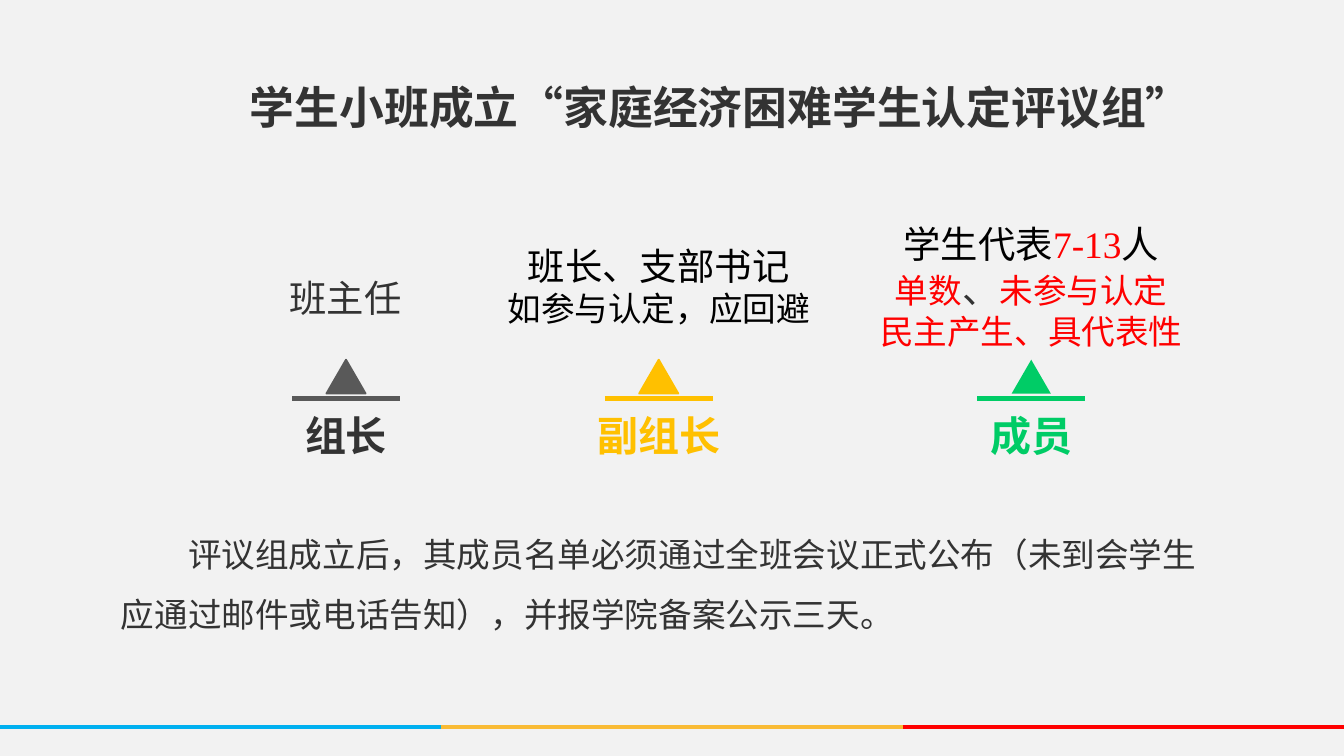
from dataclasses import dataclass

from lxml import etree
from pptx import Presentation
from pptx import util as u
from pptx.dml import color as col
from pptx.enum import shapes, text
from pptx.oxml import ns


@dataclass(frozen=True)
class Theme:
    font: str = "Times New Roman"
    back: str = "F2F2F2"
    ink: str = "333333"
    black: str = "000000"
    gray: str = "595959"
    gold: str = "FFC000"
    green: str = "00CC66"
    red: str = "FF0000"
    sky: str = "00B0F0"
    amber: str = "F9BB35"
    head: int = 24
    role: int = 22
    main: int = 20
    note: int = 18


T = Theme()
MID, LEFT = text.PP_ALIGN.CENTER, text.PP_ALIGN.LEFT


def write(box, place, paras, align=MID, gap=1.0, bold=False, wrap=True):
    box.left, box.top, box.width, box.height = [u.Cm(v) for v in place]
    frame = box.text_frame
    frame.word_wrap = wrap
    frame.auto_size = text.MSO_AUTO_SIZE.SHAPE_TO_FIT_TEXT
    frame.vertical_anchor = text.MSO_ANCHOR.TOP
    for i, runs in enumerate(paras):
        para = frame.add_paragraph() if i else frame.paragraphs[0]
        para.alignment, para.line_spacing = align, gap
        para.space_before = u.Pt(0)
        for words, size, tint in runs:
            run = para.add_run()
            run.text = words
            run.font.name, run.font.size, run.font.bold = T.font, u.Pt(size), bold
            run.font.color.rgb = col.RGBColor.from_string(tint)
    return frame


def rule(x1, x2, y, tint, width):
    line = slide.shapes.add_connector(
        shapes.MSO_CONNECTOR.STRAIGHT, u.Cm(x1), u.Cm(y), u.Cm(x2), u.Cm(y))
    line.line.color.rgb = col.RGBColor.from_string(tint)
    line.line.width = u.Pt(width)
    etree.SubElement(line._element.spPr, ns.qn("a:effectLst"))


deck = Presentation()
deck.slide_width, deck.slide_height = u.Cm(25.4), u.Cm(14.29)
slide = deck.slides.add_slide(deck.slide_layouts[1])
slide.background.fill.solid()
slide.background.fill.fore_color.rgb = col.RGBColor.from_string(T.back)
title, body = slide.placeholders

write(title, (4.47, 1.37, 18.59, 1.27),
      [[("学生小班成立“家庭经济困难学生认定评议组”", T.head, T.ink)]], LEFT, bold=True)

frame = write(body, (2.03, 9.58, 21.34, 2.57),
              [[("评议组成立后，其成员名单必须通过全班会议正式公布（未到会学生应通过邮件或电话告知），并报学院备案公示三天。",
                 T.note, T.ink)]], LEFT, 1.5)
props = frame.paragraphs[0]._p.get_or_add_pPr()
props.set("marL", "0")
props.set("indent", str(u.Cm(1.27)))
etree.SubElement(props, ns.qn("a:buNone"))

roles = [
    ("组长", 6.54, T.gray, T.ink, 4.65, 2.64, 1.55, LEFT, 1.5, False,
     [[("班主任", T.main, T.ink)]]),
    ("副组长", 12.45, T.gold, T.gold, 4.47, 6.27, 1.88, MID, 1.0, False,
     [[("班长、支部书记", T.main, T.black)],
      [("如参与认定，应回避", T.note, T.black)]]),
    ("成员", 19.49, T.green, T.green, 4.06, 8.61, 2.74, MID, 1.0, True,
     [[("学生代表", T.main, T.black), ("7-13", T.main, T.red), ("人", T.main, T.black)],
      [("单数", T.note, T.red), ("、", T.main, T.ink), ("未参与认定", T.note, T.red)],
      [("民主产生、具代表性", T.note, T.red)]]),
]
for name, x, tint, ink, top, wide, high, align, gap, wrap, paras in roles:
    rule(x - 1.02, x + 1.02, 7.53, tint, 3)
    mark = slide.shapes.add_shape(shapes.MSO_SHAPE.ISOSCELES_TRIANGLE,
                                  u.Cm(x - 0.37), u.Cm(6.8), u.Cm(0.74), u.Cm(0.64))
    mark.shadow.inherit = False
    mark.fill.solid()
    mark.fill.fore_color.rgb = col.RGBColor.from_string(tint)
    if tint == T.green:
        mark.line.fill.background()
    else:
        mark.line.color.rgb = col.RGBColor.from_string(tint)
        mark.line.width = u.Pt(1)
    label = slide.shapes.add_textbox(0, 0, 0, 0)
    frame = write(label, (x - 2.4, 7.62, 4.8, 1.19), [[(name, T.role, ink)]], bold=True)
    frame.vertical_anchor = text.MSO_ANCHOR.MIDDLE
    write(slide.shapes.add_textbox(0, 0, 0, 0), (x - wide / 2, top, wide, high),
          paras, align, gap, wrap=wrap)

ends = [0, 8.33, 17.06, 25.4]
for x1, x2, tint in zip(ends, ends[1:], (T.sky, T.amber, T.red)):
    rule(x1, x2, 13.74, tint, 2.25)

deck.save("out.pptx")
